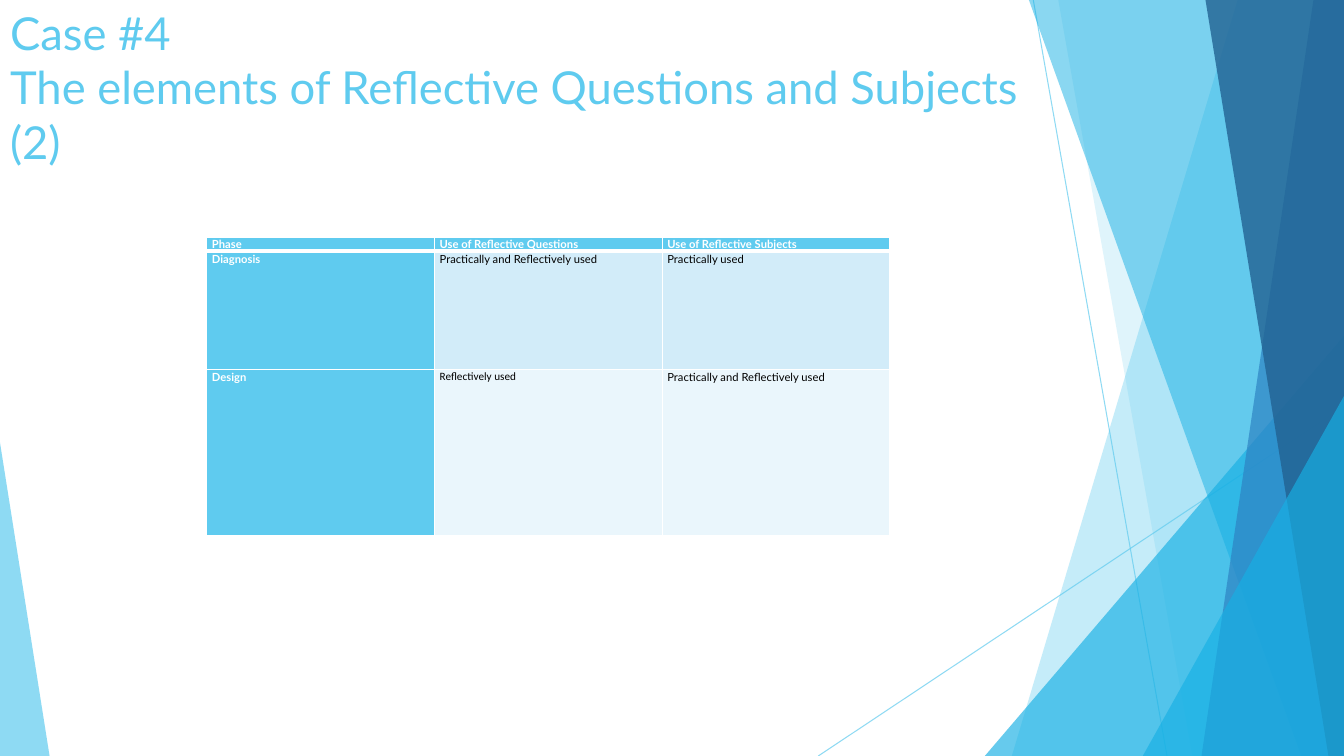
from pptx import Presentation
from pptx import util as u
from pptx.dml.color import RGBColor
from pptx.enum import shapes as sh, text as tx
from pptx.oxml import ns
from lxml import etree

HUES = {"sky": "5FCBEF", "cyan": "17B0E4", "blue": "2E83C3", "navy": "226292",
        "pale": "D2ECF9", "mist": "EAF6FC", "white": "FFFFFF", "black": "000000"}
WIDE, HIGH = 33.87, 19.05  # slide size in cm

# Band: hue, opacity, left edge at the top, left edge at the bottom
# Wedge: hue, opacity, left, top, width, apex position
DECOR = [
    ("band", "sky", 36, 31.19, 25.5),
    ("band", "sky", 20, 26.67, 30.05),
    ("wedge", "cyan", 66, 24.82, 8.46, 9.05, 1),
    ("band", "cyan", 50, 25.93, 32.79),
    ("band", "blue", 70, 33.1, 30.28),
    ("band", "navy", 80, 30.38, 33.48),
    ("wedge", "cyan", 66, 28.8, 9.98, 5.07, 1),
    ("wedge", "sky", 70, 0, 11.15, 1.25, 0),
]
RAYS = [(26.04, 0, 29.41, HIGH), (WIDE, 10.24, 20.62, HIGH)]

ROWS = [
    ("Phase", "Use of Reflective Questions", "Use of Reflective Subjects"),
    ("Diagnosis", "Practically and Reflectively used", "Practically used"),
    ("Design", "Reflectively used", "Practically and Reflectively used"),
]
TALL = (0.25, 2.97, 4.19)  # row heights in cm


def rgb(hue):
    return RGBColor.from_string(HUES[hue])


def fade(fill, pct):
    """Give a solid fill or line colour its opacity."""
    clr = fill.find(".//" + ns.qn("a:srgbClr"))
    etree.SubElement(clr, ns.qn("a:alpha"), val=str(pct * 1000))


def paint(shape, hue, pct):
    shape.shadow.inherit = False
    shape.fill.solid()
    shape.fill.fore_color.rgb = rgb(hue)
    shape.line.fill.background()
    fade(shape._element.spPr, pct)


def draw_decor(slide, left, top, width, height):
    """Translucent bands, wedges and thin rays along the slide edges."""
    right, base = left + width, top + height
    for x1, y1, x2, y2 in RAYS:
        ray = slide.shapes.add_connector(
            sh.MSO_CONNECTOR.STRAIGHT, u.Cm(left + x1), u.Cm(top + y1),
            u.Cm(left + x2), u.Cm(top + y2))
        ray.line.color.rgb = rgb("sky")
        ray.line.width = u.Pt(0.75)
        props = ray._element.spPr
        fade(props, 70)
        etree.SubElement(props, ns.qn("a:effectLst"))

    for kind, hue, pct, *geom in DECOR:
        if kind == "band":
            high, low = geom
            path = slide.shapes.build_freeform(u.Cm(left + high), u.Cm(top))
            path.add_line_segments([
                (u.Cm(right), u.Cm(top)), (u.Cm(right), u.Cm(base)),
                (u.Cm(left + low), u.Cm(base))])
            shape = path.convert_to_shape()
        else:
            x, y, span, apex = geom
            shape = slide.shapes.add_shape(
                sh.MSO_SHAPE.ISOSCELES_TRIANGLE, u.Cm(left + x), u.Cm(top + y),
                u.Cm(span), u.Cm(height - y))
            shape.adjustments[0] = apex
        paint(shape, hue, pct)


def write_title(slide, left, top, width, height):
    title = slide.shapes.title
    title.left, title.top = u.Cm(left), u.Cm(top)
    title.width, title.height = u.Cm(width), u.Cm(height)
    frame = title.text_frame
    frame.word_wrap = True
    frame.auto_size = tx.MSO_AUTO_SIZE.NONE
    frame.vertical_anchor = tx.MSO_ANCHOR.TOP
    frame.text = "Case #4"
    para = frame.paragraphs[0]
    para.add_line_break()
    para.add_run().text = "The elements of Reflective Questions and Subjects (2)"
    para.alignment = tx.PP_ALIGN.LEFT
    para.font.name, para.font.size = "Lato", u.Pt(32.4)
    para.font.color.rgb = rgb("sky")
    # Bring the title in front of the decoration
    slide.shapes._spTree.append(title._element)


def edge(cell, side, points):
    line = etree.SubElement(cell._tc.get_or_add_tcPr(), ns.qn("a:ln" + side),
                            w=str(u.Pt(points)))
    fill = etree.SubElement(line, ns.qn("a:solidFill"))
    etree.SubElement(fill, ns.qn("a:srgbClr"), val=HUES["white"])


def fill_cell(cell, words, row, col):
    head = row == 0 or col == 0
    cell.margin_left = cell.margin_right = u.Cm(0.13)
    cell.margin_top = cell.margin_bottom = 0
    cell.vertical_anchor = tx.MSO_ANCHOR.TOP
    # A thick rule parts the header row from the body
    for side in "LRTB":
        thick = (row, side) in ((0, "B"), (1, "T"))
        edge(cell, side, 3 if thick else 1)
    cell.fill.solid()
    cell.fill.fore_color.rgb = rgb("sky" if head else ("pale", "mist")[row - 1])
    cell.text = words
    para = cell.text_frame.paragraphs[0]
    para.line_spacing = 1.07
    para.font.name = "Calibri" if (row, col) == (2, 1) else "Lato"
    para.font.size, para.font.bold = u.Pt(8), head
    para.font.color.rgb = rgb("white" if head else "black")


def build_table(slide, left, top, width, height):
    count = len(ROWS[0])
    table = slide.shapes.add_table(len(ROWS), count, u.Cm(left), u.Cm(top),
                                   u.Cm(width), u.Cm(height)).table
    for column in table.columns:
        column.width = u.Cm(width / count)
    for row, texts in enumerate(ROWS):
        table.rows[row].height = u.Cm(TALL[row])
        for col, words in enumerate(texts):
            fill_cell(table.cell(row, col), words, row, col)


def main():
    deck = Presentation()
    deck.slide_width, deck.slide_height = u.Cm(WIDE), u.Cm(HIGH)
    slide = deck.slides.add_slide(deck.slide_layouts[5])
    draw_decor(slide, 0, 0, WIDE, HIGH)
    write_title(slide, 0, 0, 26.9, 3.66)
    build_table(slide, 5.21, 5.97, 17.22, sum(TALL))
    deck.save("out.pptx")


if __name__ == "__main__":
    main()
